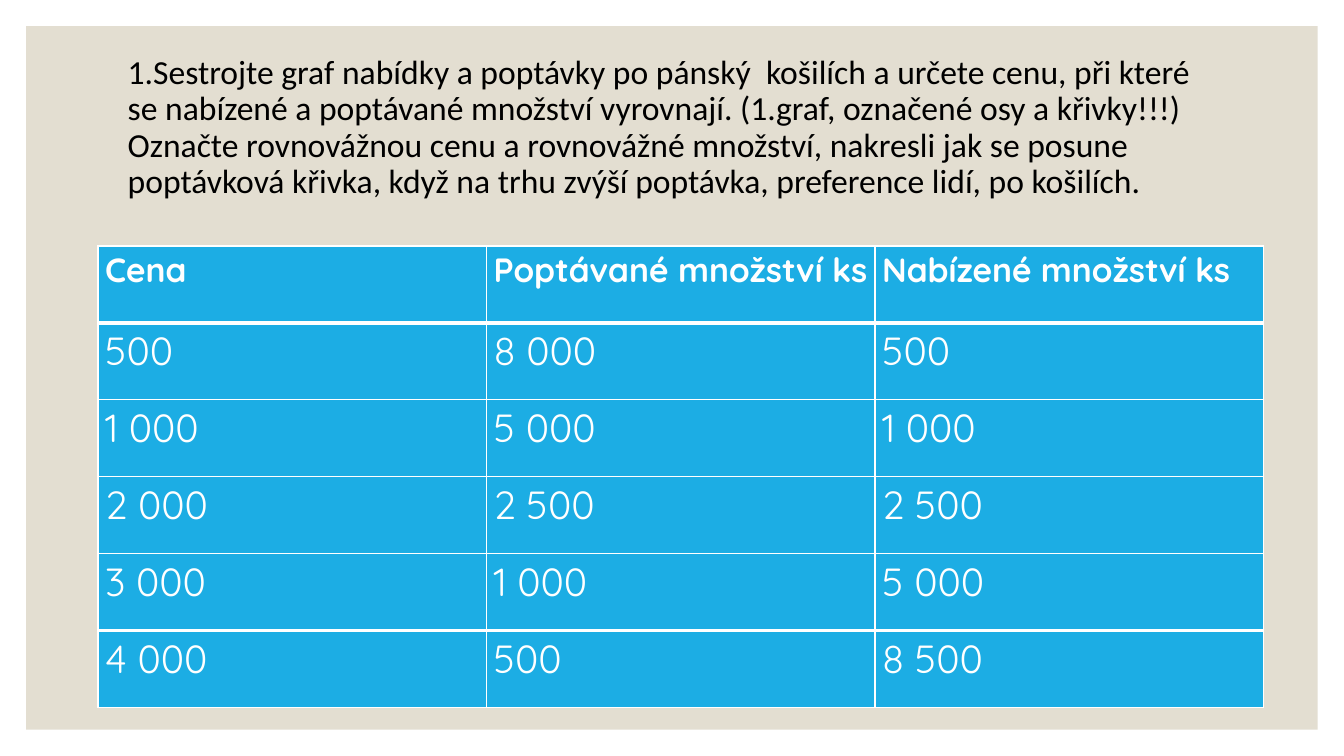
import pptx
import pptx.util
import pptx.dml.color
import pptx.enum.shapes
import pptx.enum.text
import pptx.oxml
import pptx.oxml.ns

Cm = pptx.util.Cm
Pt = pptx.util.Pt
BLACK = pptx.dml.color.RGBColor(0x00, 0x00, 0x00)
WHITE = pptx.dml.color.RGBColor(0xFF, 0xFF, 0xFF)
SAND = pptx.dml.color.RGBColor(0xE3, 0xDE, 0xD1)
BLUE = pptx.dml.color.RGBColor(0x1C, 0xAD, 0xE4)

TASK = (
    "1.Sestrojte graf nabídky a poptávky po pánský  košilích a určete cenu, "
    "při které se nabízené a poptávané množství vyrovnají. (1.graf, označené "
    "osy a křivky!!!) Označte rovnovážnou cenu a rovnovážné množství, nakresli "
    "jak se posune poptávková křivka, když na trhu zvýší poptávka, preference "
    "lidí, po košilích."
)
MARKET = [
    ("Cena", "Poptávané množství ks", "Nabízené množství ks"),
    ("500", "8 000", "500"),
    ("1 000", "5 000", "1 000"),
    ("2 000", "2 500", "2 500"),
    ("3 000", "1 000", "5 000"),
    ("4 000", "500", "8 500"),
]


def write_text(tf, text, font, size, color, bold=False, spacing=1.0, after=0):
    """Put one formatted paragraph into a text frame."""
    p = tf.paragraphs[0]
    p.line_spacing = spacing
    p.space_after = Pt(after)
    r = p.add_run()
    r.text = text
    r.font.name = font
    r.font.size = Pt(size)
    r.font.bold = bold
    r.font.color.rgb = color


def set_borders(cell, top, bottom):
    """Draw white cell borders, with the top and bottom widths in points."""
    tcPr = cell._tc.get_or_add_tcPr()
    widths = {"lnL": 1, "lnR": 1, "lnT": top, "lnB": bottom}
    for i, (side, width) in enumerate(widths.items()):
        ln = pptx.oxml.parse_xml(
            f'<a:{side} {pptx.oxml.ns.nsdecls("a")} w="{Pt(width)}">'
            f'<a:solidFill><a:srgbClr val="{WHITE}"/></a:solidFill></a:{side}>'
        )
        tcPr.insert(i, ln)


def add_panel(s, left, top, width, height):
    """Add the sand-coloured background panel."""
    sp = s.shapes.add_shape(
        pptx.enum.shapes.MSO_SHAPE.RECTANGLE, left, top, width, height
    )
    sp.shadow.inherit = False
    sp.fill.solid()
    sp.fill.fore_color.rgb = SAND
    sp.line.fill.background()


def add_task(s, left, top, width, height):
    """Add the task text, centred slightly above the middle of its box."""
    tf = s.shapes.add_textbox(left, top, width, height).text_frame
    tf.word_wrap = True
    tf.vertical_anchor = pptx.enum.text.MSO_ANCHOR.MIDDLE
    tf.margin_bottom = Cm(1.04)
    write_text(tf, TASK, font="Calibri", size=24, color=BLACK, spacing=0.9)


def add_market_table(s, left, top, width, height):
    """Add the table of demanded and supplied quantities by price."""
    rows, cols = len(MARKET), len(MARKET[0])
    table = s.shapes.add_table(rows, cols, left, top, width, height).table
    thick_edges = {1, rows - 1}
    for i, values in enumerate(MARKET):
        header = i == 0
        for j, value in enumerate(values):
            cell = table.cell(i, j)
            cell.margin_left = cell.margin_right = Cm(0.18)
            cell.margin_top = cell.margin_bottom = 0
            cell.fill.solid()
            cell.fill.fore_color.rgb = BLUE
            set_borders(
                cell,
                top=3 if i in thick_edges else 1,
                bottom=3 if i + 1 in thick_edges else 1,
            )
            write_text(
                cell.text_frame, value, font="Quicksand", color=WHITE,
                size=24 if header else 28, bold=header, spacing=1.07, after=8,
            )


def main():
    """Build and save the slide."""
    prs = pptx.Presentation()
    prs.slide_width, prs.slide_height = Cm(33.87), Cm(19.05)
    s = prs.slides.add_slide(prs.slide_layouts[6])
    add_panel(s, Cm(0.66), Cm(0.66), Cm(32.55), Cm(17.73))
    add_task(s, Cm(2.97), Cm(1.78), Cm(27.94), Cm(3.81))
    add_market_table(s, Cm(2.47), Cm(6.2), Cm(29.37), Cm(11.63))
    prs.save("out.pptx")


if __name__ == "__main__":
    main()
